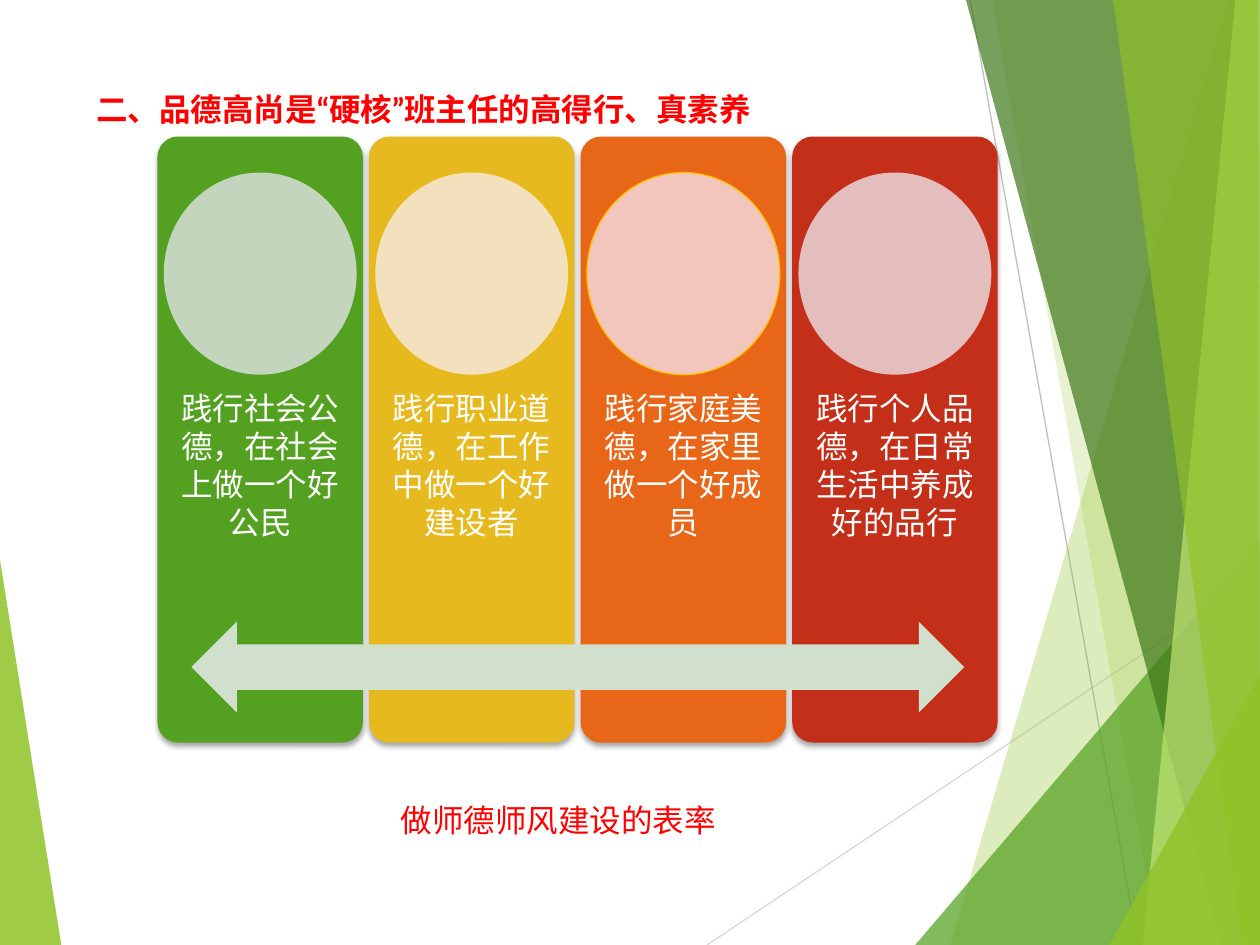
from lxml import etree
from pptx import Presentation
from pptx.dml.color import RGBColor
from pptx.enum.lang import MSO_LANGUAGE_ID
from pptx.enum.shapes import MSO_CONNECTOR, MSO_SHAPE
from pptx.enum.text import MSO_ANCHOR, PP_ALIGN
from pptx.oxml.ns import qn
from pptx.util import Pt

STRAIGHT = MSO_CONNECTOR.STRAIGHT
CARD, CIRCLE, ARROW = MSO_SHAPE.ROUNDED_RECTANGLE, MSO_SHAPE.OVAL, MSO_SHAPE.LEFT_RIGHT_ARROW
TOP = MSO_ANCHOR.TOP
LEFT, CENTER = PP_ALIGN.LEFT, PP_ALIGN.CENTER
CHINESE = MSO_LANGUAGE_ID.SIMPLIFIED_CHINESE

WIDTH, HEIGHT = 720, 540
FONT, FONT_SIZE = "Lato", 18

COLORS = {
    "lime": "90C226", "green": "54A021", "dark green": "3F7819", "light lime": "C0E474",
    "yellow": "E6B91E", "orange": "E76618", "red": "C42F1A", "gold": "FFC000",
    "pale green": "C3D6BD", "pale yellow": "F3E0BD", "pale orange": "F3C6BD",
    "pale red": "E4BEBD", "arrow": "D1DFCD", "light gray": "D9D9D9", "gray": "BFBFBF",
    "text red": "FF0000", "white": "FFFFFF", "black": "000000",
}

TITLE = "二、品德高尚是“硬核”班主任的高得行、真素养"
CAPTION = "做师德师风建设的表率"
# Text, card colour, circle colour, circle outline
CARDS = [
    ("践行社会公德，在社会上做一个好公民", "green", "pale green", None),
    ("践行职业道德，在工作中做一个好建设者", "yellow", "pale yellow", None),
    ("践行家庭美德，在家里做一个好成员", "orange", "pale orange", "gold"),
    ("践行个人品德，在日常生活中养成好的品行", "red", "pale red", None),
]
CARD_LEFT, CARD_TOP, CARD_WIDTH, CARD_HEIGHT, CARD_PITCH = 90, 78, 117.4, 346.3, 120.9
CARD_SIDE_MARGIN, CARD_TOP_MARGIN = 6.6, 141
CIRCLE_INSET, CIRCLE_TOP, CIRCLE_HEIGHT = 3.6, 98.6, 115.5

# Background facets: colour, opacity in percent, corners
LEFT_FACET = ("lime", 85, [(0, 320), (35, HEIGHT), (0, HEIGHT)])
BOTTOM_RIGHT, TOP_RIGHT = (WIDTH, HEIGHT), (WIDTH, 0)
RIGHT_FACETS = [
    ("lime", 30, [(702, 0), (543, HEIGHT), BOTTOM_RIGHT, TOP_RIGHT]),
    ("lime", 20, [(567, 0), (662, HEIGHT), BOTTOM_RIGHT, TOP_RIGHT]),
    ("green", 72, [(523, HEIGHT), (WIDTH, 309), BOTTOM_RIGHT]),
    ("dark green", 70, [(552, 0), (698, HEIGHT), BOTTOM_RIGHT, TOP_RIGHT]),
    ("light lime", 70, [(706, 0), (653, HEIGHT), BOTTOM_RIGHT, TOP_RIGHT]),
    ("lime", 65, [(636, 0), (710, HEIGHT), BOTTOM_RIGHT, (719, 0)]),
    ("lime", 80, [(634, HEIGHT), (WIDTH, 385), BOTTOM_RIGHT]),
]
RAYS = [("light gray", 404, HEIGHT, WIDTH, 329), ("gray", 554.4, 0, 650.2, HEIGHT)]


def rgb(name):
    return RGBColor.from_string(COLORS[name])


def style(shape, fill, outline=None):
    shape.shadow.inherit = False
    shape.fill.solid()
    shape.fill.fore_color.rgb = rgb(fill)
    if outline:
        shape.line.color.rgb = rgb(outline)
        shape.line.width = Pt(0.75)
    else:
        shape.line.fill.background()


def add_facet(slide, color, opacity, corners):
    builder = slide.shapes.build_freeform(*corners[0], scale=Pt(1))
    builder.add_line_segments(corners[1:], close=True)
    shape = builder.convert_to_shape()
    style(shape, color)
    color_element = shape._element.spPr.find(qn("a:solidFill"))[0]
    etree.SubElement(color_element, qn("a:alpha"), val=str(opacity * 1000))


def add_ray(slide, color, *ends):
    line = slide.shapes.add_connector(STRAIGHT, *map(Pt, ends))
    line.line.color.rgb = rgb(color)
    line.line.width = Pt(0.75)
    etree.SubElement(line._element.spPr, qn("a:effectLst"))


def add_shape(slide, kind, box, fill, outline=None):
    shape = slide.shapes.add_shape(kind, *map(Pt, box))
    style(shape, fill, outline)
    return shape


def add_card_shadow(shape):
    effects = shape._element.spPr.find(qn("a:effectLst"))
    shadow = etree.SubElement(effects, qn("a:outerShdw"), blurRad=str(Pt(3)),
                              dist=str(Pt(2)), dir="5400000", rotWithShape="0")
    color = etree.SubElement(shadow, qn("a:srgbClr"), val=COLORS["black"])
    etree.SubElement(color, qn("a:alpha"), val="35000")


def write(shape, text, color, alignment=LEFT, bold=False, wrap=True):
    frame = shape.text_frame
    frame.vertical_anchor = TOP
    frame.word_wrap = wrap
    paragraph = frame.paragraphs[0]
    paragraph.alignment = alignment
    run = paragraph.add_run()
    run.text = text
    run.font.size = Pt(FONT_SIZE)
    run.font.bold = bold
    run.font.language_id = CHINESE
    run.font.color.rgb = rgb(color)
    run.font.name = FONT
    # East Asian characters take their font from a separate element
    etree.SubElement(run.font._element, qn("a:ea"), typeface=FONT)
    return frame


def main():
    presentation = Presentation()
    presentation.slide_width, presentation.slide_height = Pt(WIDTH), Pt(HEIGHT)
    slide = presentation.slides.add_slide(presentation.slide_layouts[6])

    # Background
    add_facet(slide, *LEFT_FACET)
    for ray in RAYS:
        add_ray(slide, *ray)
    for facet in RIGHT_FACETS:
        add_facet(slide, *facet)

    # Title
    title = slide.shapes.add_textbox(Pt(48), Pt(48), Pt(500), Pt(42))
    write(title, TITLE, "text red", bold=True)

    # Cards with circles
    for index, (text, fill, circle_fill, outline) in enumerate(CARDS):
        left = CARD_LEFT + index * CARD_PITCH
        card = add_shape(slide, CARD, (left, CARD_TOP, CARD_WIDTH, CARD_HEIGHT), fill)
        card.adjustments[0] = 0.1
        add_card_shadow(card)
        frame = write(card, text, "white", CENTER)
        frame.margin_left = frame.margin_right = Pt(CARD_SIDE_MARGIN)
        frame.margin_top = Pt(CARD_TOP_MARGIN)
        circle_box = (left + CIRCLE_INSET, CIRCLE_TOP, CARD_WIDTH - 2 * CIRCLE_INSET, CIRCLE_HEIGHT)
        add_shape(slide, CIRCLE, circle_box, circle_fill, outline)

    # Arrow across the cards
    add_shape(slide, ARROW, (109.4, 355.2, 441.6, 52), "arrow")

    # Caption
    caption = slide.shapes.add_textbox(Pt(221.8), Pt(454.3), Pt(196.6), Pt(29))
    write(caption, CAPTION, "text red", wrap=False)

    presentation.save("out.pptx")


if __name__ == "__main__":
    main()
